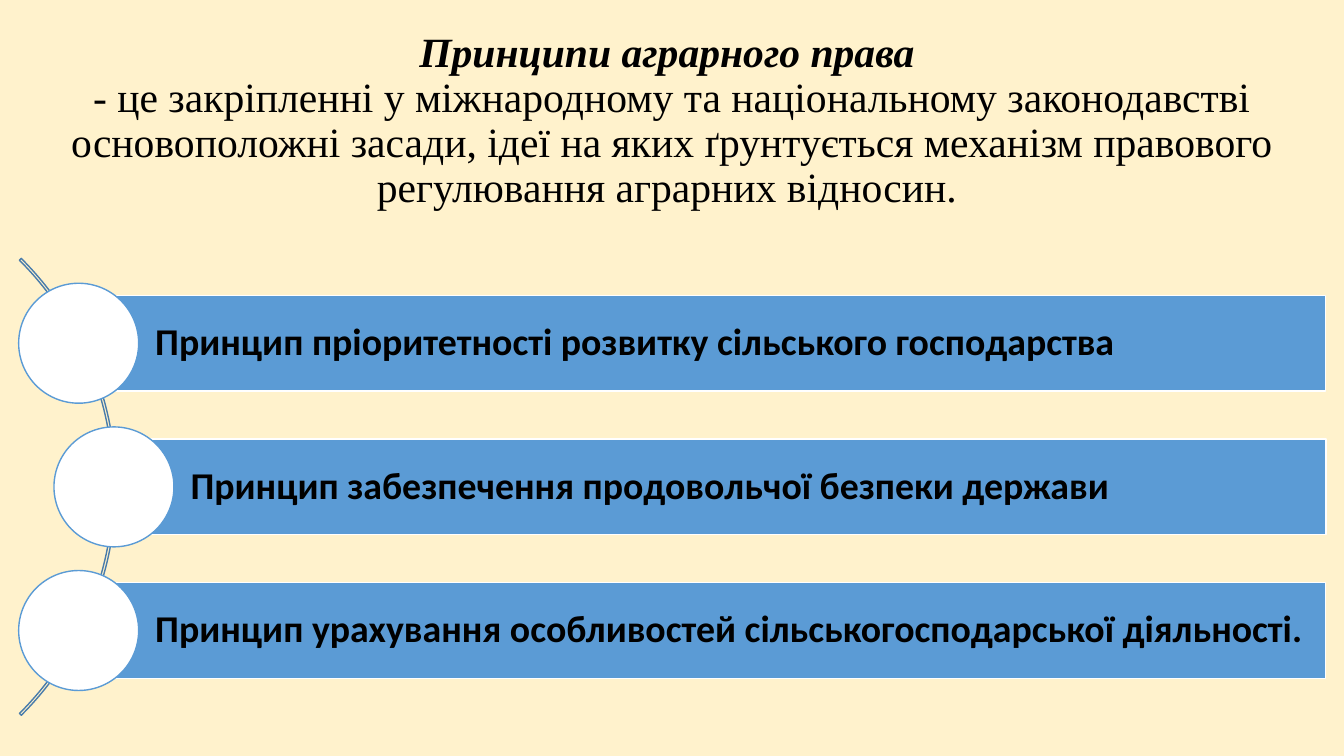
from pptx import Presentation
from pptx.dml.color import RGBColor
from pptx.enum.shapes import MSO_SHAPE
from pptx.enum.text import MSO_ANCHOR, PP_ALIGN
from pptx.util import Inches, Pt

W, H = 13.33, 7.5
INK, BLUE, WHITE, ARC_BLUE, CREAM = "000000", "5B9BD5", "FFFFFF", "497CAB", "FFF2CC"
TITLE = "Принципи аграрного права "
DEFINITION = ("- це закріпленні у міжнародному та національному законодавстві "
              "основоположні засади, ідеї на яких ґрунтується механізм правового "
              "регулювання аграрних відносин. ")
PRINCIPLES = [
    "Принцип пріоритетності розвитку сільського господарства",
    "Принцип забезпечення продовольчої безпеки держави",
    "Принцип урахування особливостей сільськогосподарської діяльності.",
]


def paint(fmt, color):
    fmt.solid()
    fmt.fore_color.rgb = RGBColor.from_string(color)


def add_shape(kind, x, y, w, h, fill, line):
    sp = s.shapes.add_shape(kind, Inches(x), Inches(y), Inches(w), Inches(h))
    sp.shadow.inherit = False
    if fill:
        paint(sp.fill, fill)
    else:
        sp.fill.background()
    paint(sp.line.fill, line)
    sp.line.width = Pt(1)
    return sp


prs = Presentation()
prs.slide_width, prs.slide_height = Inches(W), Inches(H)
s = prs.slides.add_slide(prs.slide_layouts[6])
paint(s.background.fill, CREAM)

# Title and definition
tb = s.shapes.add_textbox(Inches(0.12), Inches(0.29), Inches(13.1), Inches(1.83))
tf = tb.text_frame
tf.word_wrap = True
tf.vertical_anchor = MSO_ANCHOR.MIDDLE
p = tf.paragraphs[0]
p.alignment, p.line_spacing = PP_ALIGN.CENTER, 0.9
for text, strong in ((TITLE, True), (DEFINITION, False)):
    r = p.add_run()
    r.text = text
    font = {"name": "Times New Roman", "size": Pt(29.7), "bold": strong, "italic": strong}
    for key, value in font.items():
        setattr(r.font, key, value)
    paint(r.font.fill, INK)
    if strong:
        p.add_line_break()

# Arc behind the circles
MID_Y, PITCH, ARC = 4.83, 1.425, 6.41
arc = add_shape(MSO_SHAPE.BLOCK_ARC, -5.26, MID_Y - ARC / 2, ARC, ARC, None, ARC_BLUE)
for i, value in enumerate((189, 27, 0.004)):
    arc.adjustments[i] = value

# One bar and circle per principle, the middle one shifted right
BAR_H, BAR_RIGHT, CIRCLE = 0.95, 13.15, 1.19
for i, text in enumerate(PRINCIPLES):
    cx = 1.13 if i == 1 else 0.78
    cy = MID_Y + (i - 1) * PITCH
    bar = add_shape(MSO_SHAPE.RECTANGLE, cx, cy - BAR_H / 2, BAR_RIGHT - cx, BAR_H, BLUE, WHITE)
    tf = bar.text_frame
    frame = {"word_wrap": True, "vertical_anchor": MSO_ANCHOR.MIDDLE,
             "margin_left": Inches(0.76), "margin_right": Inches(0.07),
             "margin_top": Inches(0.07), "margin_bottom": Inches(0.07)}
    for key, value in frame.items():
        setattr(tf, key, value)
    p = tf.paragraphs[0]
    p.alignment, p.line_spacing = PP_ALIGN.LEFT, 0.9
    r = p.add_run()
    r.text = text
    for key, value in {"name": "Calibri", "size": Pt(27), "bold": True}.items():
        setattr(r.font, key, value)
    paint(r.font.fill, INK)
    add_shape(MSO_SHAPE.OVAL, cx - CIRCLE / 2, cy - CIRCLE / 2, CIRCLE, CIRCLE, WHITE, BLUE)

prs.save("out.pptx")
